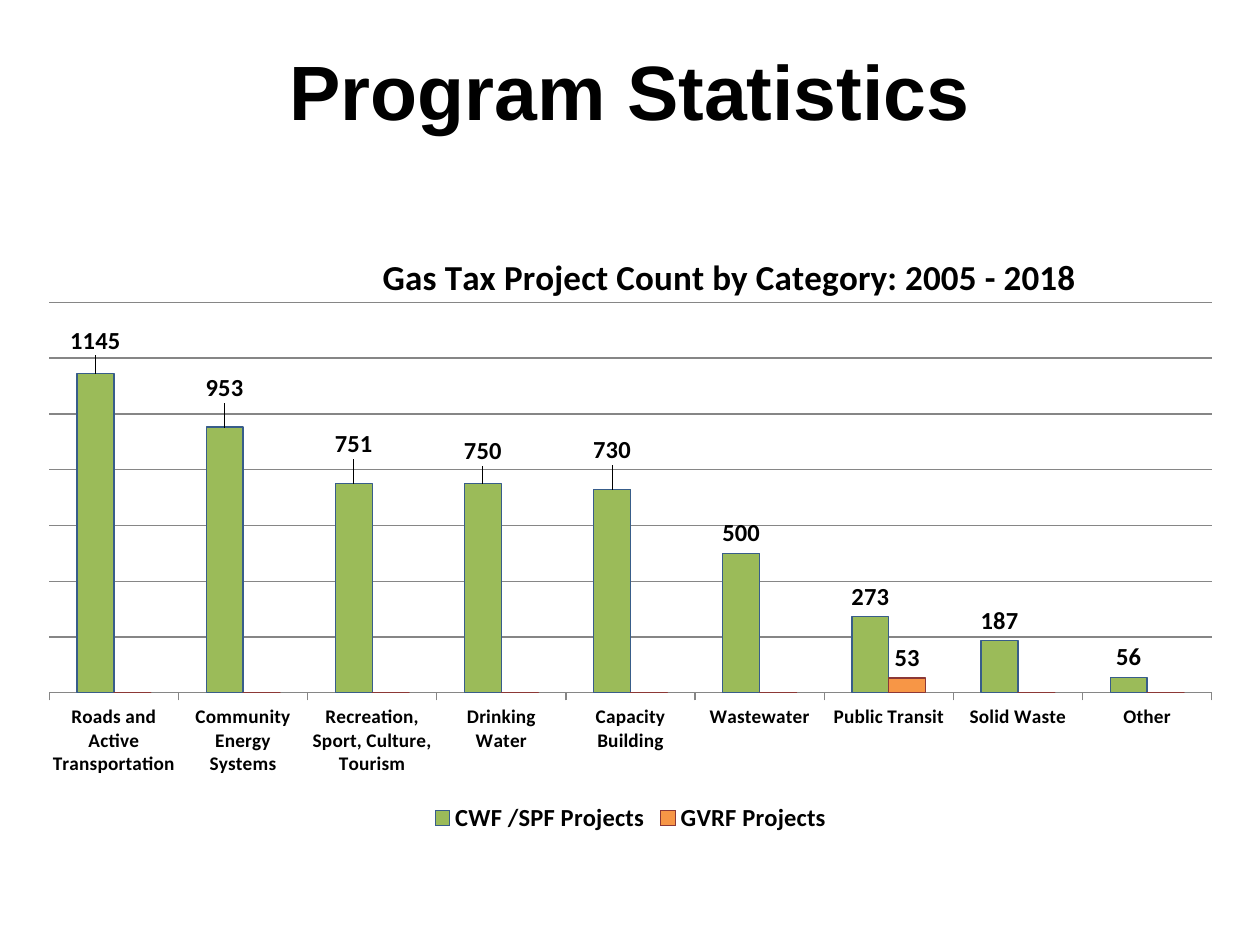
from copy import deepcopy

from lxml import etree
from pptx import Presentation
from pptx.chart.data import CategoryChartData
from pptx.dml.color import RGBColor
from pptx.enum.chart import (XL_CHART_TYPE, XL_LABEL_POSITION, XL_LEGEND_POSITION,
                             XL_TICK_LABEL_POSITION, XL_TICK_MARK)
from pptx.enum.text import MSO_ANCHOR, PP_ALIGN
from pptx.oxml import parse_xml
from pptx.oxml.ns import nsdecls, qn
from pptx.util import Inches, Pt

CLUSTERED = XL_CHART_TYPE.COLUMN_CLUSTERED
OUTSIDE_END = XL_LABEL_POSITION.OUTSIDE_END
LEGEND_BOTTOM = XL_LEGEND_POSITION.BOTTOM
LABELS_LOW = XL_TICK_LABEL_POSITION.LOW
TICK_OUT, TICK_NONE = XL_TICK_MARK.OUTSIDE, XL_TICK_MARK.NONE
MIDDLE, CENTER = MSO_ANCHOR.MIDDLE, PP_ALIGN.CENTER

COLORS = {"text": "000000", "grid": "868686",
          "cwf": "9BBB59", "cwf_edge": "385D8A",
          "gvrf": "F79646", "gvrf_edge": "8C3836"}
TITLE_BOX = (0.5, 0.09, 9, 1.25)
CHART_BOX = (0.2, 1.65, 9.61, 5)

PROJECT_COUNTS = [
    ("Roads and Active Transportation", 1145, 0),
    ("Community Energy Systems", 953, 0),
    ("Recreation, Sport, Culture, Tourism", 751, 0),
    ("Drinking Water", 750, 0),
    ("Capacity Building", 730, 0),
    ("Wastewater", 500, 0),
    ("Public Transit", 273, 53),
    ("Solid Waste", 187, 0),
    ("Other", 56, 0),
]
# Upward shift of the first labels, as shares of the chart height
LABEL_LIFTS = [0.02, 0.03, 0.03, 0.02, 0.03]
NO_LEADER_LINES = (
    f'<c:extLst {nsdecls("c")}><c:ext uri="{{CE6537A1-D6FC-4f65-9D91-7224C49458BB}}" '
    'xmlns:c15="http://schemas.microsoft.com/office/drawing/2012/chart">'
    '<c15:showLeaderLines val="0"/></c:ext></c:extLst>')


def rgb(name):
    return RGBColor.from_string(COLORS[name])


def style_font(font, size, face="Calibri"):
    font.name = face
    font.size = Pt(size)
    font.bold = True
    font.color.rgb = rgb("text")


def set_layout(parent, index, **settings):
    """Place a chart part by shares of the chart's size."""
    for old in parent.findall(qn("c:layout")):
        parent.remove(old)
    layout = etree.Element(qn("c:layout"))
    manual = etree.SubElement(layout, qn("c:manualLayout"))
    for tag, value in settings.items():
        etree.SubElement(manual, qn(f"c:{tag}")).set("val", str(value))
    parent.insert(index, layout)


def add_title(slide, box):
    title = slide.shapes.add_textbox(*map(Inches, box)).text_frame
    title.word_wrap = True
    title.vertical_anchor = MIDDLE
    title.text = "Program Statistics"
    title.paragraphs[0].alignment = CENTER
    style_font(title.paragraphs[0].runs[0].font, 44, "Arial")


def style_series(series, color, number_format):
    series.format.fill.solid()
    series.format.fill.fore_color.rgb = rgb(color)
    series.format.line.color.rgb = rgb(f"{color}_edge")
    series.format.line.width = Pt(0.75)
    series.invert_if_negative = False
    labels = series.data_labels
    labels.show_value = True
    labels.position = OUTSIDE_END
    labels.number_format = number_format
    labels.number_format_is_linked = False
    style_font(labels.font, 14)


def lift_labels(series):
    for index in range(len(LABEL_LIFTS)):
        label = series.points[index].data_label
        label.position = OUTSIDE_END
        style_font(label.font, 14)
    labels = series.data_labels._element
    for point_label, lift in zip(labels.findall(qn("c:dLbl")), LABEL_LIFTS):
        set_layout(point_label, 1, x=0, y=-lift)
    labels.append(parse_xml(NO_LEADER_LINES))


def style_axes(chart):
    categories = chart.category_axis
    categories.major_tick_mark = TICK_OUT
    categories.minor_tick_mark = TICK_NONE
    categories.tick_label_position = LABELS_LOW
    style_font(categories.tick_labels.font, 11)
    counts = chart.value_axis
    counts.minimum_scale, counts.maximum_scale, counts.major_unit = 0, 1400, 200
    counts.has_major_gridlines = True
    counts.visible = False
    for line in (categories.format.line, counts.major_gridlines.format.line):
        line.color.rgb = rgb("grid")
        line.width = Pt(0.75)


def move_last_series_to_right_axis(plot_area):
    left_bars = plot_area.find(qn("c:barChart"))
    left_axes = [plot_area.find(qn(f"c:{tag}")) for tag in ("catAx", "valAx")]
    right_bars = deepcopy(left_bars)
    left_bars.remove(left_bars.findall(qn("c:ser"))[-1])
    for series in right_bars.findall(qn("c:ser"))[:-1]:
        right_bars.remove(series)
    left_bars.addnext(right_bars)

    category_axis, count_axis = right_axes = [deepcopy(axis) for axis in left_axes]
    axis_ids = ("5001", "5002")
    for axis, own, other in zip(right_axes, axis_ids, reversed(axis_ids)):
        axis.find(qn("c:axId")).set("val", own)
        axis.find(qn("c:crossAx")).set("val", other)
        axis.find(qn("c:delete")).set("val", "1")
    for reference, own in zip(right_bars.findall(qn("c:axId")), axis_ids):
        reference.set("val", own)
    count_axis.find(qn("c:axPos")).set("val", "r")
    count_axis.find(qn("c:crosses")).set("val", "max")
    count_axis.remove(count_axis.find(qn("c:majorGridlines")))
    left_axes[-1].addnext(count_axis)
    count_axis.addnext(category_axis)


def add_project_chart(slide, box):
    names, cwf, gvrf = zip(*PROJECT_COUNTS)
    data = CategoryChartData()
    data.categories = names
    data.add_series("CWF /SPF Projects", cwf)
    data.add_series("GVRF Projects", gvrf)
    chart = slide.shapes.add_chart(CLUSTERED, *map(Inches, box), data).chart
    chart.font.name = "Calibri"
    chart.font.size = Pt(10)
    chart.font.color.rgb = rgb("text")

    heading = chart.chart_title
    heading.text_frame.text = "Gas Tax Project Count by Category: 2005 - 2018"
    style_font(heading.text_frame.paragraphs[0].runs[0].font, 20)
    set_layout(heading._element, 1, xMode="edge", yMode="edge", x=0.29, y=0.06)
    heading._element.find(qn("c:overlay")).set("val", "1")

    plot = chart.plots[0]
    plot.gap_width = 150
    plot.overlap = 0
    plot.vary_by_categories = False
    cwf_series, gvrf_series = plot.series
    style_series(cwf_series, "cwf", "General")
    style_series(gvrf_series, "gvrf", "0;;;")  # zero counts stay unlabelled
    lift_labels(cwf_series)
    style_axes(chart)
    plot_area = chart._chartSpace.chart.plotArea
    set_layout(plot_area, 0, layoutTarget="inner", xMode="edge", yMode="edge",
               x=0.02, y=0.15, w=0.96, h=0.62)
    move_last_series_to_right_axis(plot_area)

    chart.has_legend = True
    chart.legend.position = LEGEND_BOTTOM
    chart.legend.include_in_layout = False
    style_font(chart.legend.font, 14)


def main():
    deck = Presentation()
    deck.slide_width, deck.slide_height = Inches(10), Inches(7.5)
    slide = deck.slides.add_slide(deck.slide_layouts[6])
    add_title(slide, TITLE_BOX)
    add_project_chart(slide, CHART_BOX)
    deck.save("out.pptx")


if __name__ == "__main__":
    main()
